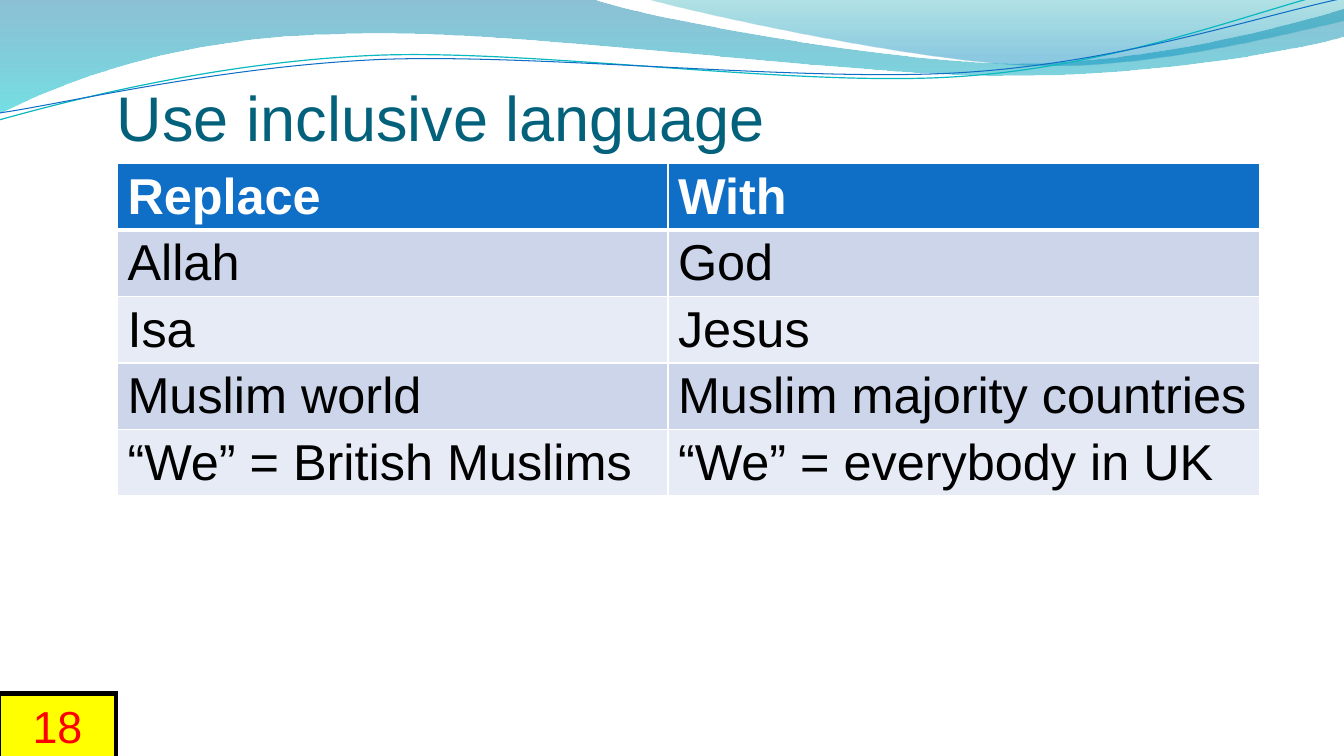
"""Build the slide on inclusive language, laid out on a grid of hundredths of an inch."""

from dataclasses import dataclass

from lxml.etree import Element, SubElement
from pptx import Presentation
from pptx.dml.color import RGBColor
from pptx.enum.shapes import MSO_SHAPE
from pptx.enum.text import MSO_ANCHOR, MSO_AUTO_SIZE, PP_ALIGN
from pptx.oxml import parse_xml
from pptx.oxml.ns import nsdecls, qn
from pptx.shapes.autoshape import Shape
from pptx.slide import Slide
from pptx.table import _Cell
from pptx.text.text import _Paragraph
from pptx.util import Inches, Length, Pt

COLUMNS, ROWS = 1333, 750
FONT = "Arial"

WHITE = RGBColor(0xFF, 0xFF, 0xFF)
BLACK = RGBColor(0x00, 0x00, 0x00)
RED = RGBColor(0xFF, 0x00, 0x00)
YELLOW = RGBColor(0xFF, 0xFF, 0x00)
TITLE_TEAL = RGBColor(0x04, 0x61, 0x7B)
HEADER_BLUE = RGBColor(0x0F, 0x6F, 0xC6)
LINE_TEAL = RGBColor(0x0A, 0xB8, 0xBF)
BAND_DARK = RGBColor(0xCC, 0xD5, 0xEA)
BAND_LIGHT = RGBColor(0xE7, 0xEB, 0xF5)
DEEP_BLUE = RGBColor(0x00, 0x74, 0xA1)
AQUA = RGBColor(0x00, 0xC6, 0xCF)
SEA_GREEN = RGBColor(0x00, 0xA1, 0xA9)
SKY_BLUE = RGBColor(0x00, 0x8B, 0xBF)

Point = tuple[float, float]
WORDING = [
    ("Replace", "With"),
    ("Allah", "God"),
    ("Isa", "Jesus"),
    ("Muslim world", "Muslim majority countries"),
    ("“We” = British Muslims", "“We” = everybody in UK"),
]


@dataclass(frozen=True)
class Tint:
    """One gradient stop: its position, colour and opacity in percent."""

    position: float
    color: RGBColor
    opacity: int


@dataclass(frozen=True)
class Wave:
    """An outline whose segments hold one point (straight) or three (curved)."""

    start: Point
    segments: list[list[Point]]
    tints: tuple[Tint, ...] = ()
    line_color: RGBColor = WHITE
    line_width: float = 0


WAVES = [
    Wave(
        (0, 0),
        [
            [(587, -1)],
            [(634, 17), (885, 63), (1011, 63)],
            [(1138, 63), (1278, 26), (1333, 9)],
            [(1335, 36)],
            [(1311, 44), (1160, 76), (994, 75)],
            [(829, 75), (509, 28), (343, 34)],
            [(172, 36), (61, 83), (-1, 113)],
            [(0, 0)],
        ],
        tints=(Tint(0, DEEP_BLUE, 45), Tint(1, AQUA, 55)),
    ),
    Wave(
        (639, -1),
        [
            [(679, 11), (909, 62), (1025, 65)],
            [(1141, 69), (1282, 32), (1333, 21)],
            [(1333, 0)],
            [(639, -1)],
        ],
        tints=(Tint(0, SEA_GREEN, 30), Tint(0.8, SKY_BLUE, 45)),
    ),
    Wave(
        (-1, 119),
        [
            [(64, 101), (211, 62), (369, 55)],
            [(527, 48), (790, 87), (950, 76)],
            [(1110, 66), (1252, 8), (1331, -10)],
        ],
        line_color=LINE_TEAL,
        line_width=0.85,
    ),
    Wave(
        (0, 112),
        [
            [(63, 103), (218, 66), (378, 59)],
            [(537, 53), (796, 82), (955, 72)],
            [(1115, 62), (1255, 14), (1334, -2)],
        ],
        line_color=HEADER_BLUE,
        line_width=0.75,
    ),
]


def grid(count: float) -> Length:
    """Return the length of a number of grid cells."""
    return Inches(count / 100)


def bend(band: Shape, segments: list[list[Point]]) -> None:
    """Turn each run of three straight steps into one cubic curve."""
    steps = iter(list(band.element.iter(qn("a:lnTo"))))
    for segment in segments:
        run = [next(steps) for _ in segment]
        if len(run) == 3:
            curve = Element(qn("a:cubicBezTo"))
            run[0].addprevious(curve)
            for step in run:
                curve.append(step[0])
                step.getparent().remove(step)


def tint_shape(shape: Shape, tints: tuple[Tint, ...]) -> None:
    """Fill a shape with a translucent gradient running downwards."""
    shape.fill.gradient()
    shape.fill.gradient_angle = 270
    for stop, tint in zip(shape.fill.gradient_stops, tints):
        stop.position = tint.position
        stop.color.rgb = tint.color
    for color, tint in zip(shape.element.spPr.iter(qn("a:srgbClr")), tints):
        SubElement(color, qn("a:alpha"), val=str(tint.opacity * 1000))


def draw_wave(slide: Slide, wave: Wave) -> None:
    """Draw a gradient band or an open wavy line."""
    builder = slide.shapes.build_freeform(*map(grid, wave.start))
    points = [(grid(x), grid(y)) for segment in wave.segments for x, y in segment]
    builder.add_line_segments(points, close=bool(wave.tints))
    band = builder.convert_to_shape()
    bend(band, wave.segments)
    band.shadow.inherit = False
    if wave.tints:
        tint_shape(band, wave.tints)
        band.line.fill.background()
    else:
        band.fill.background()
        band.line.color.rgb = wave.line_color
        band.line.width = Pt(wave.line_width)


def style(paragraph: _Paragraph, size: int, color: RGBColor, bold: bool = False) -> None:
    """Set the font of a paragraph."""
    paragraph.font.name = FONT
    paragraph.font.size = Pt(size)
    paragraph.font.bold = bold
    paragraph.font.color.rgb = color


def draw_title(slide: Slide) -> None:
    """Place the title in front of the waves."""
    title = slide.shapes.title
    title.element.getparent().append(title.element)
    title.left, title.top, title.width, title.height = map(grid, (116, 76, 1102, 77))
    frame = title.text_frame
    frame.text = "Use inclusive language"
    frame.vertical_anchor = MSO_ANCHOR.BOTTOM
    frame.margin_left = frame.margin_right = frame.margin_bottom = 0
    frame.paragraphs[0].alignment = PP_ALIGN.LEFT
    style(frame.paragraphs[0], 45, TITLE_TEAL)


def border_cell(cell: _Cell, top: int, bottom: int) -> None:
    """Give a cell white borders, with its own top and bottom widths."""
    properties = cell._tc.get_or_add_tcPr()
    for index, (side, width) in enumerate(zip("LRTB", (1, 1, top, bottom))):
        edge = parse_xml(
            f'<a:ln{side} {nsdecls("a")} w="{Pt(width)}"><a:solidFill>'
            f'<a:srgbClr val="{WHITE}"/></a:solidFill></a:ln{side}>'
        )
        properties.insert(index, edge)


def draw_wording(slide: Slide) -> None:
    """Draw the table of words to replace."""
    area = map(grid, (116.5, 162, 1133, 350))
    frame = slide.shapes.add_table(len(WORDING), 2, *area)
    table = frame.table
    for column, width in zip(table.columns, (546, 587)):
        column.width = grid(width)
    for row, words in enumerate(WORDING):
        table.rows[row].height = grid(41)
        header = row == 0
        band = HEADER_BLUE if header else (BAND_LIGHT, BAND_DARK)[row % 2]
        for column, word in enumerate(words):
            cell = table.cell(row, column)
            cell.text = word
            style(cell.text_frame.paragraphs[0], 36, WHITE if header else BLACK, header)
            cell.fill.solid()
            cell.fill.fore_color.rgb = band
            border_cell(cell, top=3 if row == 1 else 1, bottom=3 if header else 1)
    frame.height = grid(350)


def draw_page_number(slide: Slide) -> None:
    """Draw the boxed page number in the bottom left corner."""
    page = slide.shapes.add_shape(MSO_SHAPE.RECTANGLE, *map(grid, (-1, 688, 116, 64)))
    page.shadow.inherit = False
    page.fill.solid()
    page.fill.fore_color.rgb = YELLOW
    page.line.color.rgb = BLACK
    page.line.width = Pt(3)
    SubElement(page.line._ln, qn("a:miter"), lim="800000")
    frame = page.text_frame
    frame.text = "18"
    frame.vertical_anchor = MSO_ANCHOR.TOP
    frame.auto_size = MSO_AUTO_SIZE.SHAPE_TO_FIT_TEXT
    frame.paragraphs[0].alignment = PP_ALIGN.CENTER
    style(frame.paragraphs[0], 32, RED)


def main() -> None:
    """Build and save the presentation."""
    deck = Presentation()
    deck.slide_width, deck.slide_height = grid(COLUMNS), grid(ROWS)
    slide = deck.slides.add_slide(deck.slide_layouts[5])
    for wave in WAVES:
        draw_wave(slide, wave)
    draw_title(slide)
    draw_wording(slide)
    draw_page_number(slide)
    deck.save("out.pptx")


if __name__ == "__main__":
    main()
